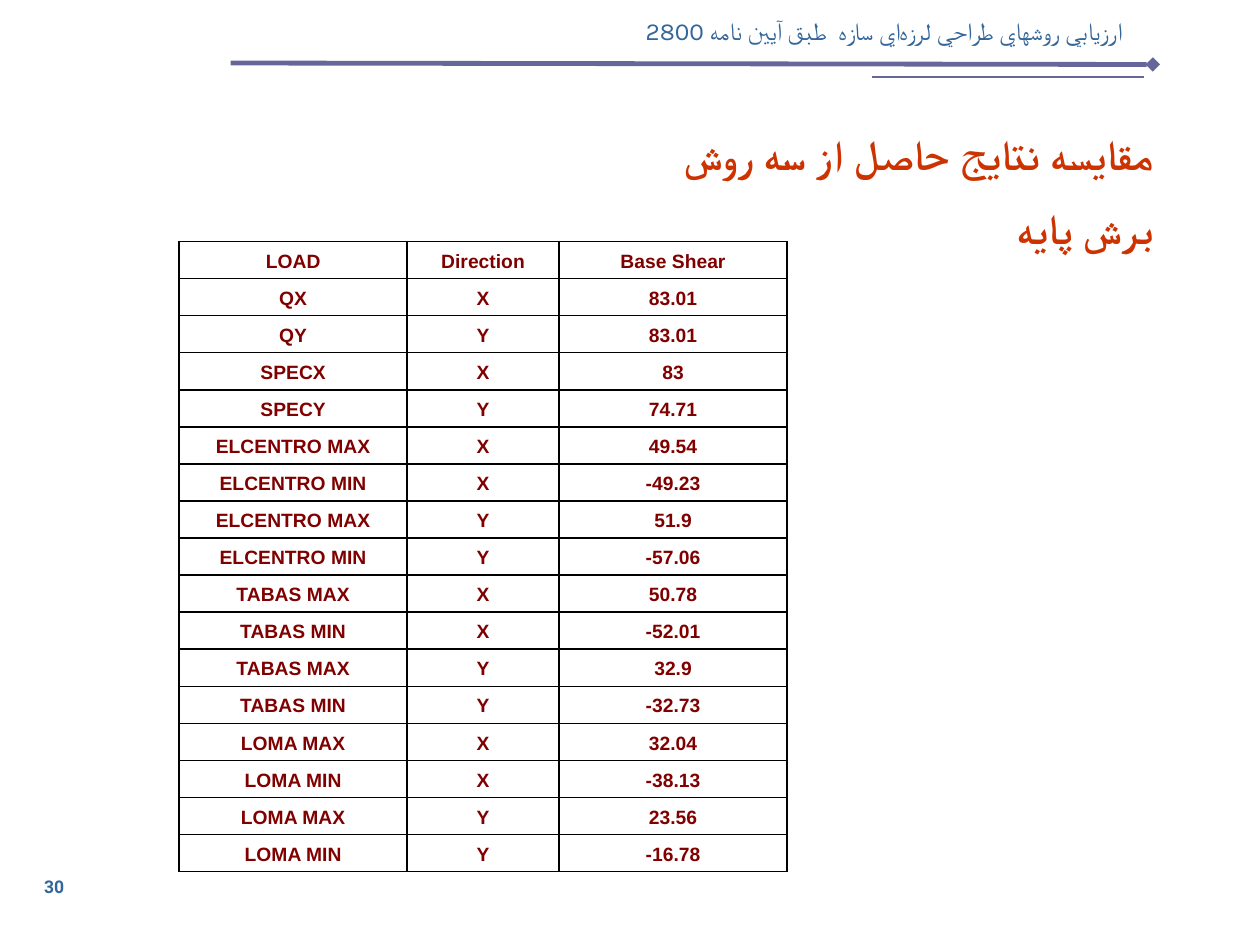
from pptx import Presentation
from pptx import util as u
from pptx.dml.color import RGBColor
from pptx.enum import shapes, text
from pptx.oxml.ns import qn
from lxml import etree

BLUE, VIOLET, ORANGE, MAROON, BLACK = "336699", "666699", "CC3300", "800000", "000000"
ALIGN = text.PP_ALIGN
ZERO_WIDTH_NON_JOINER = chr(0x200C)

COLUMN_WIDTHS = [4.6, 3.06, 4.6]
TABLE_HEIGHT = 12.7
HEADINGS = ("LOAD", "Direction", "Base Shear")
BASE_SHEARS = [
    ("QX", "X", "83.01"),
    ("QY", "Y", "83.01"),
    ("SPECX", "X", "83"),
    ("SPECY", "Y", "74.71"),
    ("ELCENTRO MAX", "X", "49.54"),
    ("ELCENTRO MIN", "X", "-49.23"),
    ("ELCENTRO MAX", "Y", "51.9"),
    ("ELCENTRO MIN", "Y", "-57.06"),
    ("TABAS MAX", "X", "50.78"),
    ("TABAS MIN", "X", "-52.01"),
    ("TABAS MAX", "Y", "32.9"),
    ("TABAS MIN", "Y", "-32.73"),
    ("LOMA MAX", "X", "32.04"),
    ("LOMA MIN", "X", "-38.13"),
    ("LOMA MAX", "Y", "23.56"),
    ("LOMA MIN", "Y", "-16.78"),
]


def rgb(color):
    return RGBColor.from_string(color)


def add_run(paragraph, words, font, size, color, bold=False):
    run = paragraph.add_run()
    run.text = words
    run.font.name = font
    run.font.size = u.Pt(size)
    run.font.bold = bold
    run.font.color.rgb = rgb(color)
    # Persian letters take the complex-script font
    etree.SubElement(run.font._element, qn("a:cs"), typeface=font)


def add_rtl_text(slide, box, lines, align, font, size, color, bold=False,
                 spacing=None, wrap=True, anchor=text.MSO_ANCHOR.TOP):
    frame = slide.shapes.add_textbox(*map(u.Cm, box)).text_frame
    frame.word_wrap = wrap
    frame.vertical_anchor = anchor
    for index, words in enumerate(lines):
        paragraph = frame.add_paragraph() if index else frame.paragraphs[0]
        paragraph.alignment = align
        paragraph.line_spacing = spacing
        if index:
            paragraph.space_before = u.Pt(size * 0.2)
        paragraph._p.get_or_add_pPr().set("rtl", "1")
        add_run(paragraph, words, font, size, color, bold)


def add_rule(slide, start, end, width, diamond=False):
    rule = slide.shapes.add_connector(
        shapes.MSO_CONNECTOR.STRAIGHT, *map(u.Cm, start + end))
    rule.line.color.rgb = rgb(VIOLET)
    rule.line.width = u.Pt(width)
    if diamond:
        etree.SubElement(rule.line._get_or_add_ln(), qn("a:headEnd"), type="diamond")
    etree.SubElement(rule._element.spPr, qn("a:effectLst"))


def add_borders(cell, color, width):
    properties = cell._tc.get_or_add_tcPr()
    for side in ("lnL", "lnR", "lnT", "lnB"):
        border = etree.SubElement(properties, qn(f"a:{side}"), w=str(u.Pt(width)))
        fill = etree.SubElement(border, qn("a:solidFill"))
        etree.SubElement(fill, qn("a:srgbClr"), val=color)


def add_shear_table(slide, left, top):
    rows = [HEADINGS] + BASE_SHEARS
    table = slide.shapes.add_table(
        len(rows), len(HEADINGS), u.Cm(left), u.Cm(top),
        u.Cm(sum(COLUMN_WIDTHS)), u.Cm(TABLE_HEIGHT)).table
    table.first_row = table.horz_banding = False
    for column, width in zip(table.columns, COLUMN_WIDTHS):
        column.width = u.Cm(width)
    for row, values in zip(table.rows, rows):
        row.height = u.Cm(TABLE_HEIGHT / len(rows))
        for cell, value in zip(row.cells, values):
            add_borders(cell, BLACK, 1)
            cell.fill.background()
            cell.vertical_anchor = text.MSO_ANCHOR.BOTTOM
            paragraph = cell.text_frame.paragraphs[0]
            paragraph.alignment = ALIGN.CENTER
            add_run(paragraph, value, "Arial", 11, MAROON, bold=True)


def main():
    deck = Presentation()
    deck.slide_width, deck.slide_height = u.Cm(25.4), u.Cm(19.05)
    slide = deck.slides.add_slide(deck.slide_layouts[6])

    # Running header with its rules
    header = ZERO_WIDTH_NON_JOINER.join(
        ["ارزيابي روشهاي طراحي لرزه", "اي سازه  طبق آيين نامه 2800"])
    add_rtl_text(slide, (5.74, 0.2, 17.15, 0.84), [header],
                 ALIGN.RIGHT, "Karla", 14, BLUE)
    add_rule(slide, (23.24, 1.3), (4.65, 1.27), 2.75, diamond=True)
    add_rule(slide, (23.06, 1.55), (17.58, 1.55), 1.5)

    # Page number
    add_rtl_text(slide, (0.64, 17.35, 5.28, 1.04), ["30"], ALIGN.LEFT,
                 "Roboto", 10, BLUE, bold=True, wrap=False,
                 anchor=text.MSO_ANCHOR.MIDDLE)

    # Title
    add_rtl_text(slide, (2.34, 2.16, 21.16, 3.1),
                 ["مقايسه نتايج حاصل از سه روش", "برش پايه"],
                 ALIGN.JUSTIFY, "Times New Roman", 24, ORANGE, bold=True, spacing=1.3)

    # Base shear by load and direction
    add_shear_table(slide, 3.61, 4.87)

    deck.save("out.pptx")


if __name__ == "__main__":
    main()
